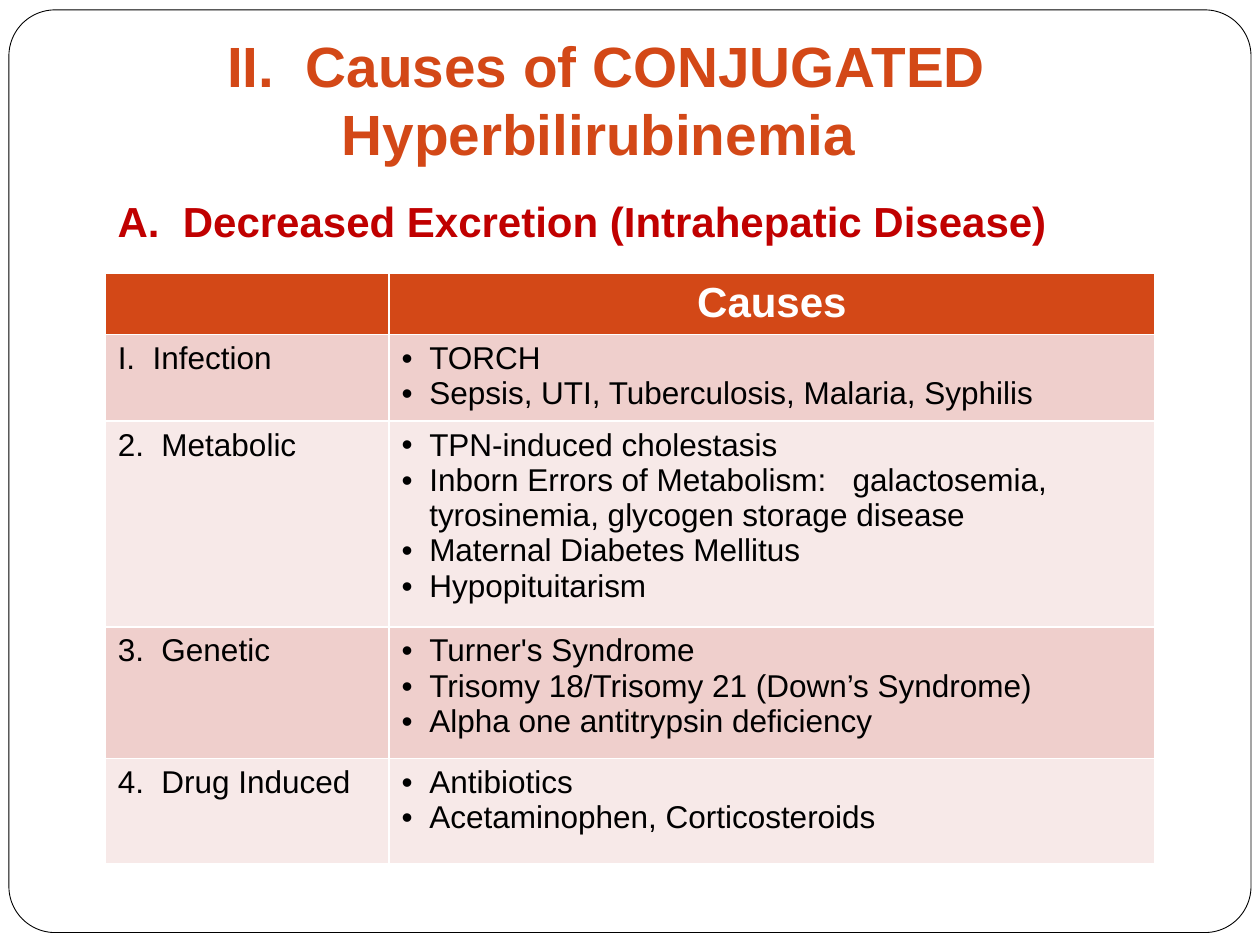
from pptx import Presentation
from pptx.dml.color import RGBColor
from pptx.enum.shapes import MSO_SHAPE as Shape
from pptx.enum.text import MSO_ANCHOR as Anchor, MSO_AUTO_SIZE as AutoSize, PP_ALIGN as Align
from pptx.oxml.ns import qn
from pptx.util import Cm, Pt
from lxml.etree import SubElement

COLORS = {"orange": "D34817", "red": "C00000", "band": "EFCFCC", "light": "F7E9E8",
          "white": "FFFFFF", "black": "000000"}
CAUSES = [
    ("I.  Infection", ["TORCH", "Sepsis, UTI, Tuberculosis, Malaria, Syphilis"]),
    ("2.  Metabolic", ["TPN-induced cholestasis",
                       "Inborn Errors of Metabolism:   galactosemia, tyrosinemia, glycogen storage disease",
                       "Maternal Diabetes Mellitus", "Hypopituitarism"]),
    ("3.  Genetic", ["Turner's Syndrome", "Trisomy 18/Trisomy 21 (Down’s Syndrome)",
                     "Alpha one antitrypsin deficiency"]),
    ("4.  Drug Induced", ["Antibiotics", "Acetaminophen, Corticosteroids"]),
]


def style(paragraph, size, color, bold=False, align=Align.LEFT):
    paragraph.alignment = align
    paragraph.font.name = "Arial"
    paragraph.font.size = Pt(size)
    paragraph.font.bold = bold
    paragraph.font.color.rgb = RGBColor.from_string(COLORS[color])


def add_bullet(paragraph, indent):
    properties = paragraph._p.get_or_add_pPr()
    properties.set("marL", str(indent))
    properties.set("indent", str(-indent))
    SubElement(properties, qn("a:buFont")).set("typeface", "Arial")
    SubElement(properties, qn("a:buChar")).set("char", "•")


presentation = Presentation()
presentation.slide_width, presentation.slide_height = Cm(25.4), Cm(19.05)
slide = presentation.slides.add_slide(presentation.slide_layouts[5])

frame = slide.shapes.add_shape(Shape.ROUNDED_RECTANGLE, Cm(0.18), Cm(0.2), Cm(25.04), Cm(18.6))
frame.adjustments[0] = 0.05
frame.shadow.inherit = False
frame.fill.solid()
frame.fill.fore_color.rgb = RGBColor.from_string(COLORS["white"])
frame.line.color.rgb = RGBColor.from_string(COLORS["black"])
frame.line.width = Pt(0.5)
slide.shapes._spTree.insert(2, frame._element)

title = slide.shapes.title
title.left, title.top, title.width, title.height = Cm(3.81), Cm(0.64), Cm(16.51), Cm(2.97)
title.text_frame.text = " II.  Causes of CONJUGATED Hyperbilirubinemia"
title.text_frame.vertical_anchor = Anchor.BOTTOM
title.text_frame.margin_bottom = Cm(0.25)
title.text_frame.auto_size = AutoSize.NONE
style(title.text_frame.paragraphs[0], 32.4, "orange", True, Align.CENTER)

table = slide.shapes.add_table(len(CAUSES) + 1, 2, Cm(2.12), Cm(5.5), Cm(21.16), Cm(11.9)).table
for column, width in zip(table.columns, (5.72, 15.44)):
    column.width = Cm(width)
for row, height in zip(table.rows, (1.24, 1.75, 4.15, 2.65, 2.13)):
    row.height = Cm(height)

table.cell(0, 1).text = "Causes"
style(table.cell(0, 1).text_frame.paragraphs[0], 24, "white", True, Align.CENTER)
for index, (category, causes) in enumerate(CAUSES, 1):
    category_cell, causes_cell = table.cell(index, 0), table.cell(index, 1)
    category_cell.text = category
    style(category_cell.text_frame.paragraphs[0], 18, "black")
    causes_cell.text = "\n".join(causes)
    for paragraph in causes_cell.text_frame.paragraphs:
        style(paragraph, 18, "black")
        add_bullet(paragraph, Cm(0.56))

for index, row in enumerate(table.rows):
    color = "orange" if index == 0 else "band" if index % 2 else "light"
    for cell in row.cells:
        cell.fill.solid()
        cell.fill.fore_color.rgb = RGBColor.from_string(COLORS[color])

subtitle = slide.shapes.add_textbox(Cm(2.12), Cm(3.81), Cm(19.9), Cm(1.28))
subtitle.text_frame.word_wrap = True
subtitle.text_frame.auto_size = AutoSize.SHAPE_TO_FIT_TEXT
subtitle.text_frame.text = "A.  Decreased Excretion (Intrahepatic Disease)"
style(subtitle.text_frame.paragraphs[0], 24, "red", True)

presentation.save("out.pptx")
